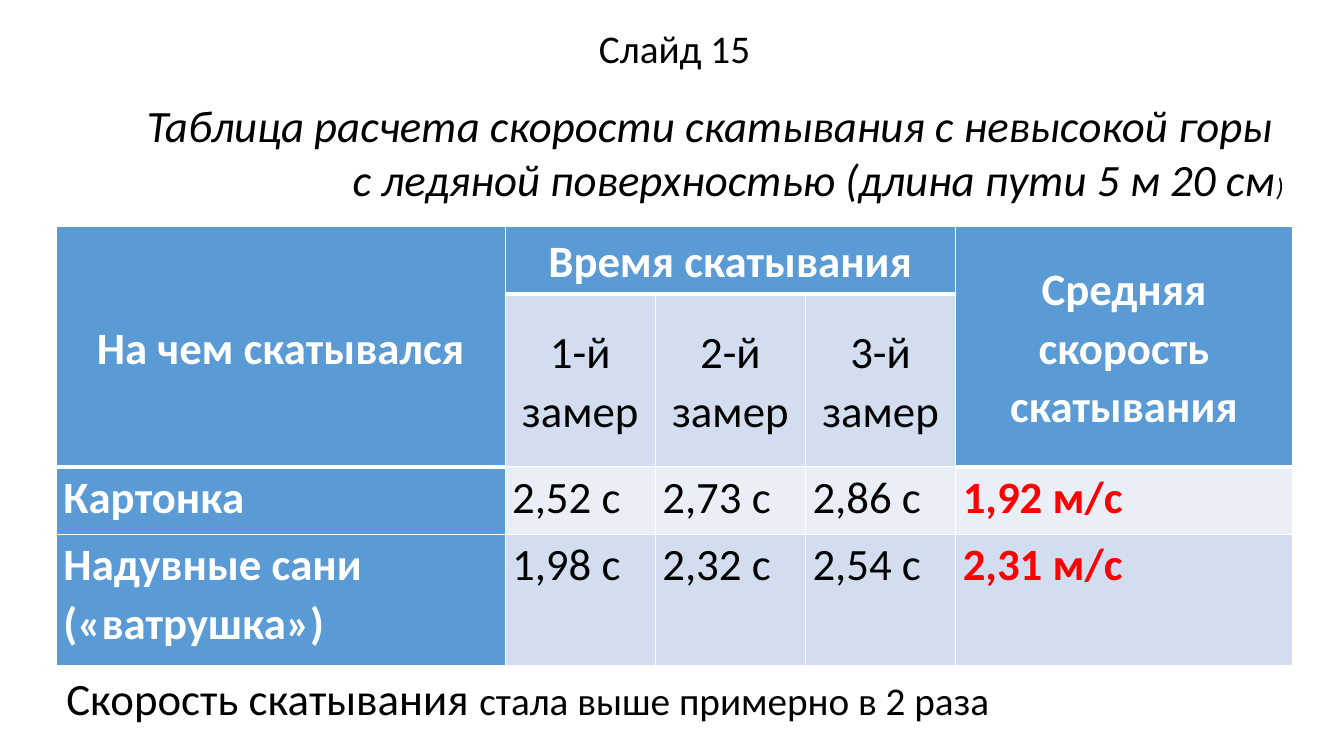
from pptx import Presentation, util as u
from pptx.dml.color import RGBColor
from pptx.enum import text as t
from pptx.oxml import parse_xml
from pptx.oxml.ns import nsdecls

# Content: each paragraph is a list of (words, size)
TITLE = [[("Слайд 15", 28)]]
HEAD = [
    [("Таблица расчета скорости скатывания с невысокой горы ", 32)],
    [("с ледяной поверхностью (длина пути 5 м 20 см", 32), (")", 18)],
]
NOTE = [[("Скорость скатывания ", 32), ("стала выше примерно в 2 раза", 28)]]
ROWS = [
    ["На чем скатывался", "Время скатывания", "", "", "Средняя скорость скатывания"],
    ["", "1-й замер", "2-й замер", "3-й замер", ""],
    ["Картонка", "2,52 с", "2,73 с", "2,86 с", "1,92 м/с"],
    ["Надувные сани («ватрушка»)", "1,98 с", "2,32 с", "2,54 с", "2,31 м/с"],
]
MERGES = [((0, 0), (1, 0)), ((0, 1), (0, 3)), ((0, 4), (1, 4))]
COLORS = {"white": "FFFFFF", "black": "000000", "red": "FF0000",
          "blue": "5B9BD5", "band": "D2DEEF", "pale": "EAEFF7"}

# Grid, in inches
WIDTH, HEIGHT = 13.33, 7.5
LEFT, TOP = 0.56, 2.25
COLS = [4.45] + [1.49] * 3 + [3.34]
TALL = [0.67, 1.36] * 2
SPAN = sum(COLS)
RIGHT, CENTER = t.PP_ALIGN.RIGHT, t.PP_ALIGN.CENTER


def color(name):
    return RGBColor.from_string(COLORS[name])


def write(frame, paras, hue="black", bold=False, italic=False, align=None, space=None):
    frame.word_wrap = True
    for i, runs in enumerate(paras):
        para = frame.add_paragraph() if i else frame.paragraphs[0]
        para.alignment = align
        para.line_spacing = space
        for words, size in runs:
            run = para.add_run()
            run.text = words
            font = run.font
            font.name, font.size = "Calibri", u.Pt(size)
            font.bold, font.italic = bold, italic
            font.color.rgb = color(hue)


def border(cell, base):
    props = cell._tc.get_or_add_tcPr()
    for side, width in zip("LRTB", (1, 1, 1, base)):
        props.append(parse_xml(
            f'<a:ln{side} {nsdecls("a")} w="{u.Pt(width)}"><a:solidFill>'
            f'<a:srgbClr val="{COLORS["white"]}"/></a:solidFill></a:ln{side}>'))


deck = Presentation()
deck.slide_width, deck.slide_height = u.Inches(WIDTH), u.Inches(HEIGHT)
slide = deck.slides.add_slide(deck.slide_layouts[6])


def label(left, top, width, height, paras, **style):
    box = slide.shapes.add_textbox(*map(u.Inches, (left, top, width, height)))
    box.fill.solid()
    box.fill.fore_color.rgb = color("white")
    write(box.text_frame, paras, **style)
    box.text_frame.auto_size = t.MSO_AUTO_SIZE.SHAPE_TO_FIT_TEXT


# Heading above the table
label(1.02, 0.92, 11.81, 1.18, HEAD, italic=True, align=RIGHT)

# Table
table = slide.shapes.add_table(
    len(ROWS), len(COLS), *map(u.Inches, (LEFT, TOP, SPAN, sum(TALL)))).table
for col, width in zip(table.columns, COLS):
    col.width = u.Inches(width)
for row, height in zip(table.rows, TALL):
    row.height = u.Inches(height)
for first, last in MERGES:
    table.cell(*first).merge(table.cell(*last))

for r, row in enumerate(ROWS):
    for c, words in enumerate(row):
        cell = table.cell(r, c)
        top = r < 2
        edge = c in (0, 4)
        head = r == 0 or c == 0 or (top and edge)
        border(cell, 3 if r == 0 or (r == 1 and edge) else 1)
        cell.fill.solid()
        cell.fill.fore_color.rgb = color("blue" if head else "pale" if r == 2 else "band")
        cell.margin_left = cell.margin_right = u.Inches(0.07)
        cell.margin_top = cell.margin_bottom = 0
        cell.vertical_anchor = t.MSO_ANCHOR.MIDDLE if top else t.MSO_ANCHOR.TOP
        if words:
            write(cell.text_frame, [[(words, 32)]], bold=head or edge,
                  hue="white" if head else "red" if edge else "black",
                  align=CENTER if top else None, space=1.07)

# Slide number and conclusion
label(5.65, 0.19, 2.08, 0.57, TITLE, align=CENTER)
label(LEFT, 6.6, SPAN, 0.64, NOTE)

deck.save("out.pptx")
